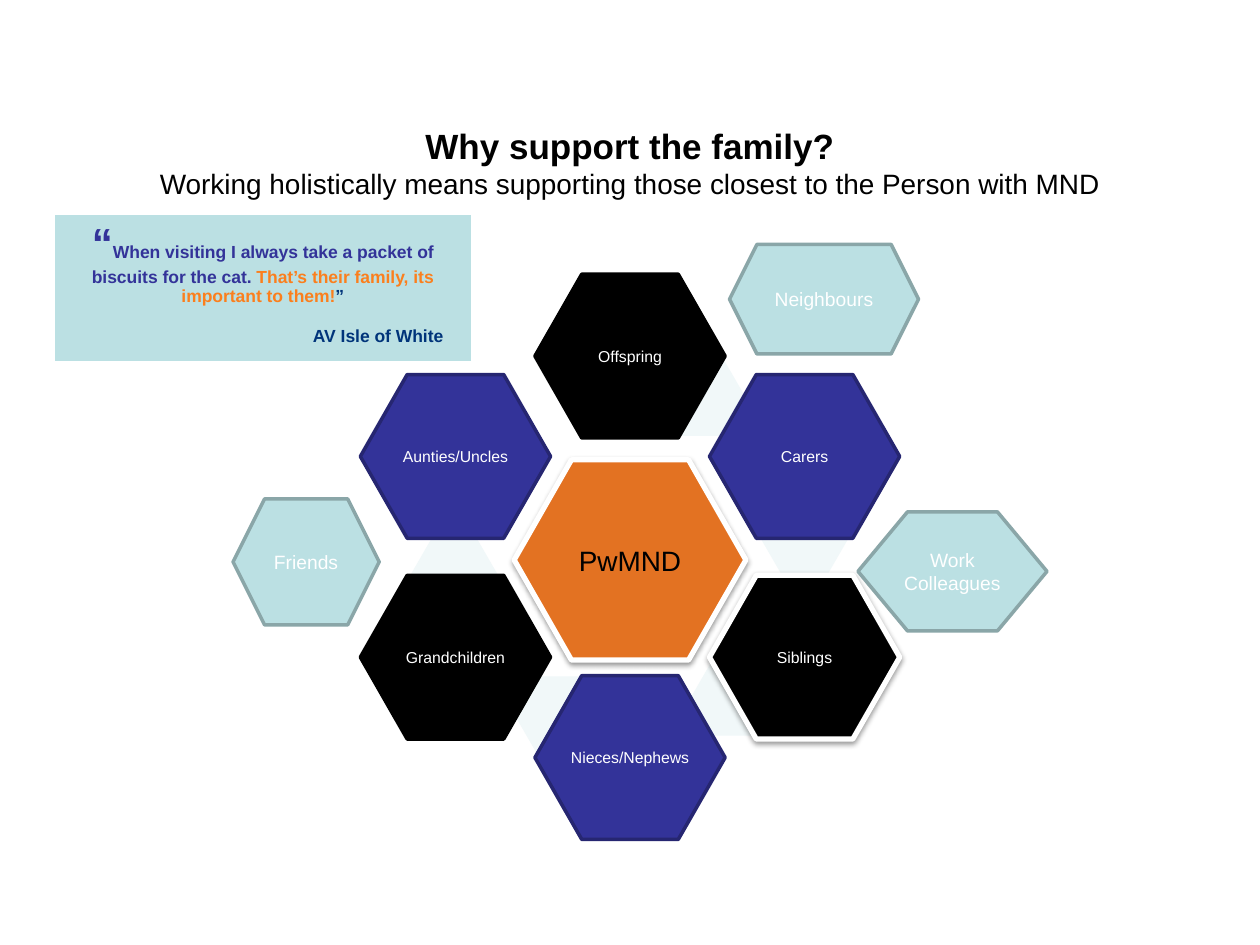
import pptx
import pptx.util
import pptx.dml.color
import pptx.enum.shapes
import pptx.enum.text
import pptx.oxml
import pptx.oxml.ns

Pt = pptx.util.Pt
ALIGN = pptx.enum.text.PP_ALIGN
MIDDLE = pptx.enum.text.MSO_ANCHOR.MIDDLE
HEXAGON = pptx.enum.shapes.MSO_SHAPE.HEXAGON
NS = pptx.oxml.ns.nsdecls("a")

WHITE, BLACK, BLUE, AQUA = "FFFFFF", "000000", "333399", "BBE0E3"
NAVY, TEAL, PALE, ORANGE = "262671", "8AA6A8", "F1F8F9", "E37222"


def color(code):
    return pptx.dml.color.RGBColor.from_string(code)


def style(run, size, code, bold=False):
    run.font.name = "Arial"
    run.font.size = Pt(size)
    run.font.bold = bold
    run.font.color.rgb = color(code)


def glow(shape):
    """Give a shape a soft shadow straight below it."""
    shape.shadow.inherit = False
    effects = shape._element.spPr.find(pptx.oxml.ns.qn("a:effectLst"))
    effects.append(pptx.oxml.parse_xml(
        f'<a:outerShdw {NS} blurRad="{Pt(3.1)}" dist="{Pt(1.6)}" dir="5400000"'
        ' rotWithShape="0"><a:srgbClr val="000000"><a:alpha val="38000"/>'
        '</a:srgbClr></a:outerShdw>'))


def hexagon(slide, box, fill, edge=None, width=2, adj=0.286):
    shape = slide.shapes.add_shape(HEXAGON, *map(Pt, box))
    shape.adjustments[0] = adj
    shape.shadow.inherit = False
    shape.fill.solid()
    shape.fill.fore_color.rgb = color(fill)
    if edge:
        shape.line.color.rgb = color(edge)
        shape.line.width = Pt(width)
    else:
        shape.line.fill.background()
    return shape


def label(shape, text, size, code=WHITE, wrap=False):
    frame = shape.text_frame
    frame.word_wrap = wrap
    frame.vertical_anchor = MIDDLE
    frame.text = text
    para = frame.paragraphs[0]
    para.alignment = ALIGN.CENTER
    style(para.runs[0], size, code)


def heading(slide, box):
    title = slide.shapes.title
    title.left, title.top, title.width, title.height = map(Pt, box)
    frame = title.text_frame
    frame.text = ("Why support the family?\n"
                  "Working holistically means supporting those closest "
                  "to the Person with MND")
    frame.auto_size = pptx.enum.text.MSO_AUTO_SIZE.NONE
    frame.word_wrap = True
    frame.vertical_anchor = MIDDLE
    for para, size, bold in zip(frame.paragraphs, (20, 16), (True, False)):
        para.alignment = ALIGN.CENTER
        style(para.runs[0], size, BLACK, bold)


def family(slide, box):
    """Ring of relatives around the person, centred in the box."""
    left, top, width, height = box
    mid_x, mid_y = left + width / 2, top + height / 2
    wide, high = 108.7, 93.6
    step_x, step_y = (width - wide) / 2, (height - high) / 4

    # Person in the middle
    hub = hexagon(slide, (mid_x - 66.2, mid_y - 55.4, 132.4, 114.4),
                  ORANGE, WHITE, 3)
    glow(hub)
    label(hub, "PwMND", 16, BLACK)

    # Relatives: name, column, row, fill, edge, offset of the pale link
    ring = [
        ("Offspring", 0, -2, BLACK, BLACK, (16.6, -112.3)),
        ("Carers", 1, -1, BLUE, NAVY, (74.9, -31.7)),
        ("Siblings", 1, 1, BLACK, WHITE, (34.6, 59)),
        ("Nieces/Nephews", 0, 2, BLUE, NAVY, (-66.2, 68.4)),
        ("Grandchildren", -1, 1, BLACK, BLACK, (-125.3, -11.5)),
        ("Aunties/Uncles", -1, -1, BLUE, NAVY, None),
    ]
    for name, col, row, fill, edge, link in ring:
        if link:
            hexagon(slide, (mid_x + link[0], mid_y + link[1], 49.7, 43.2),
                    PALE, adj=0.289)
        raised = edge == WHITE
        cell = hexagon(slide, (mid_x + col * step_x - wide / 2,
                               mid_y + row * step_y - high / 2, wide, high),
                       fill, edge, 3 if raised else 2)
        if raised:
            glow(cell)
        label(cell, name, 9)


def circle(slide, name, box, adj=0.25):
    """One group from the wider social circle."""
    shape = hexagon(slide, box, AQUA, TEAL, adj=adj)
    label(shape, name, 11, wrap=True)


def quote(slide, box):
    table = slide.shapes.add_table(1, 1, *map(Pt, box)).table
    table.first_row = table.horz_banding = False
    cell = table.cell(0, 0)
    cell.margin_left = cell.margin_right = Pt(16)
    cell.fill.solid()
    cell.fill.fore_color.rgb = color(AQUA)

    # White borders, heavier at the bottom
    props = cell._tc.get_or_add_tcPr()
    for spot, (side, size) in enumerate(zip("LRTB", (1, 1, 1, 3))):
        props.insert(spot, pptx.oxml.parse_xml(
            f'<a:ln{side} {NS} w="{Pt(size)}"><a:solidFill>'
            f'<a:srgbClr val="{WHITE}"/></a:solidFill></a:ln{side}>'))

    # Quotation, then its source
    words, source = cell.text_frame.paragraphs[0], cell.text_frame.add_paragraph()
    words.alignment = ALIGN.CENTER
    parts = [
        ("“", 24, BLUE),
        ("When visiting I always take a packet of biscuits for the cat. ", 10, BLUE),
        ("That’s their family, its important to them!", 10, "FB7F1D"),
        ("”", 10, "00347A"),
    ]
    for text, size, code in parts:
        run = words.add_run()
        run.text = text
        style(run, size, code, True)
    source.text = "AV Isle of White"
    source.alignment = ALIGN.RIGHT
    source.space_before = Pt(11.5)
    style(source.runs[0], 10, "00347A", True)


def main():
    deck = pptx.Presentation()
    deck.slide_width, deck.slide_height = Pt(720), Pt(540)
    slide = deck.slides.add_slide(deck.slide_layouts[5])
    heading(slide, (54, 48, 612, 90))
    family(slide, (205.9, 156.7, 308.2, 323))
    circle(slide, "Neighbours", (416.9, 139.7, 108, 62.6))
    circle(slide, "Work Colleagues", (490.3, 292.5, 108, 68), 0.416)
    circle(slide, "Friends", (133.2, 285.1, 83.5, 72))
    quote(slide, (31, 122.4, 238.3, 85))
    deck.save("out.pptx")


if __name__ == "__main__":
    main()
